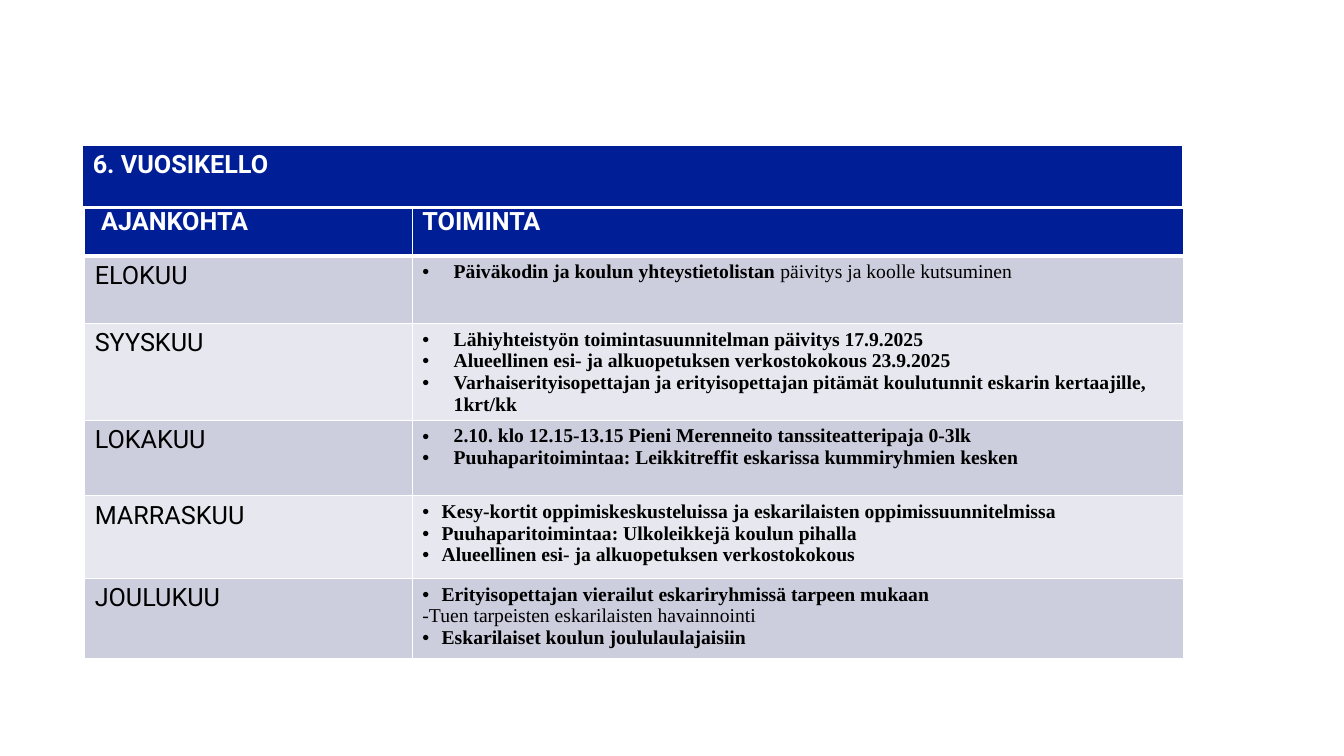
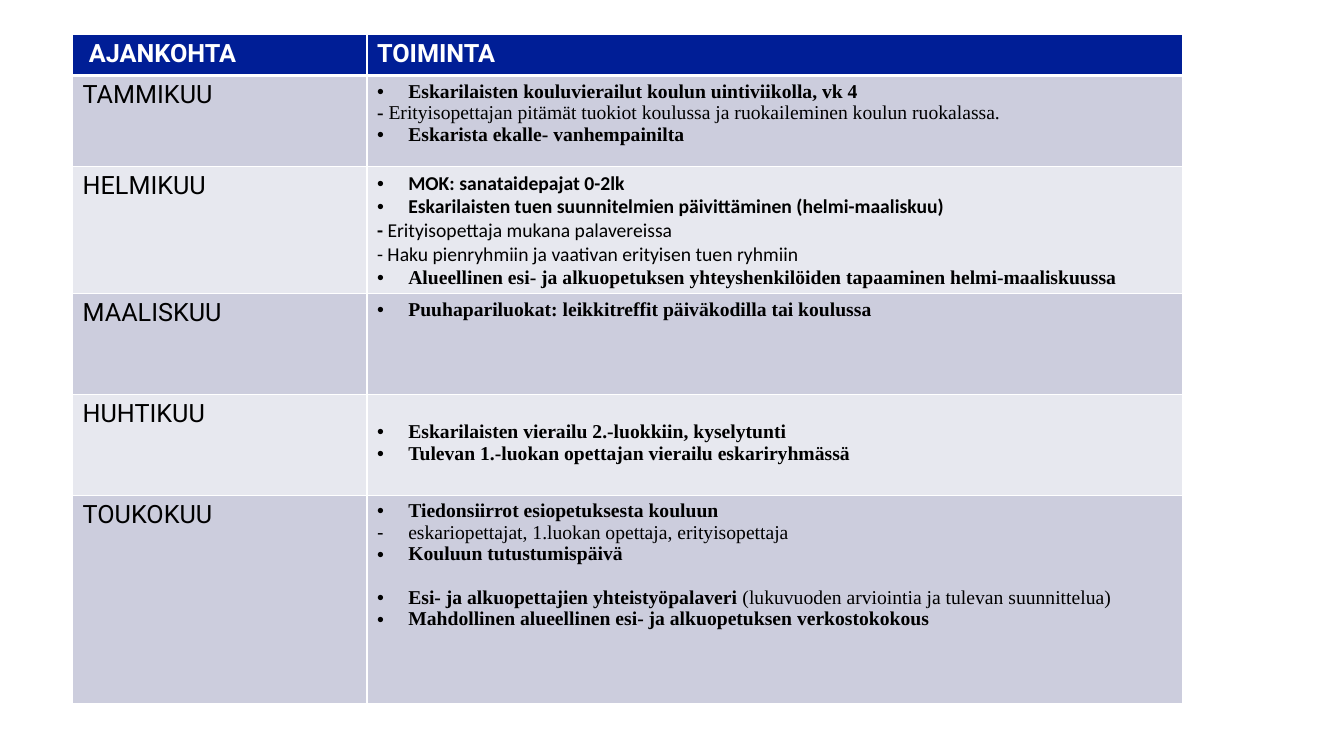
import pptx
import pptx.dml.color
import pptx.oxml
import pptx.oxml.ns
import pptx.util

Inches, Pt = pptx.util.Inches, pptx.util.Pt

BLUE, WHITE, BLACK = "001E96", "FFFFFF", "000000"
BANDS = ("CCCDDD", "E7E8EF")
HEADER = (" AJANKOHTA", "TOIMINTA")
HEADING = {"name": "Roboto", "size": Pt(18), "bold": True}
MONTH = {"name": "Roboto", "size": Pt(18), "bold": False}
SERIF = {"name": "Times New Roman", "size": Pt(14)}
SANS = {"name": "Calibri", "size": Pt(14)}
CELL_TOP = 0.05
LINE = 15.5  # one empty 14 pt line, in points

# Marker: (bullet character, hanging indent in inches)
WIDE, TIGHT, DASH, PLAIN = ("•", 0.31), ("•", 0.19), ("-", 0.31), None

# Month: name, row height, activities as (marker, bold part, regular part, options)
AUTUMN = [
    ("ELOKUU", 0.67, [
        (WIDE, "Päiväkodin ja koulun yhteystietolistan", " päivitys ja koolle kutsuminen"),
    ]),
    ("SYYSKUU", 0.96, [
        (WIDE, "Lähiyhteistyön toimintasuunnitelman päivitys 17.9.2025", ""),
        (WIDE, "Alueellinen esi- ja alkuopetuksen verkostokokous 23.9.2025", ""),
        (WIDE, "Varhaiserityisopettajan ja erityisopettajan pitämät koulutunnit "
               "eskarin kertaajille, 1krt/kk", ""),
    ]),
    ("LOKAKUU", 0.75, [
        (WIDE, "2.10. klo 12.15-13.15 Pieni Merenneito tanssiteatteripaja 0-3lk", ""),
        (WIDE, "Puuhaparitoimintaa: Leikkitreffit eskarissa kummiryhmien kesken", ""),
    ]),
    ("MARRASKUU", 0.82, [
        (TIGHT, "Kesy-kortit oppimiskeskusteluissa ja eskarilaisten oppimissuunnitelmissa", ""),
        (TIGHT, "Puuhaparitoimintaa: Ulkoleikkejä koulun pihalla", ""),
        (TIGHT, "Alueellinen esi- ja alkuopetuksen verkostokokous", ""),
    ]),
    ("JOULUKUU", 0.79, [
        (TIGHT, "Erityisopettajan vierailut eskariryhmissä tarpeen mukaan", ""),
        (PLAIN, "", "-Tuen tarpeisten eskarilaisten havainnointi"),
        (TIGHT, "Eskarilaiset koulun joululaulajaisiin", ""),
    ]),
]
SPRING = [
    ("TAMMIKUU", 0.9, [
        (WIDE, "Eskarilaisten kouluvierailut koulun uintiviikolla, vk 4", ""),
        (PLAIN, "- ", "Erityisopettajan pitämät tuokiot koulussa ja ruokaileminen "
                      "koulun ruokalassa."),
        (WIDE, "Eskarista ekalle- vanhempainilta", ""),
    ]),
    ("HELMIKUU", 1.26, [
        (WIDE, "MOK: sanataidepajat 0-2lk", "", {"font": SANS}),
        (WIDE, "Eskarilaisten tuen suunnitelmien päivittäminen (helmi-maaliskuu)", "",
         {"font": SANS}),
        (PLAIN, "-", " Erityisopettaja mukana palavereissa", {"font": SANS}),
        (PLAIN, "", "- Haku pienryhmiin ja vaativan erityisen tuen ryhmiin", {"font": SANS}),
        (WIDE, "Alueellinen esi- ja alkuopetuksen yhteyshenkilöiden tapaaminen "
               "helmi-maaliskuussa", ""),
    ]),
    ("MAALISKUU", 1, [
        (WIDE, "Puuhapariluokat: leikkitreffit päiväkodilla tai koulussa", ""),
    ]),
    ("HUHTIKUU", 1, [
        (WIDE, "Eskarilaisten vierailu 2.-luokkiin, kyselytunti", "", {"gap": LINE}),
        (WIDE, "Tulevan 1.-luokan opettajan vierailu eskariryhmässä", ""),
    ]),
    ("TOUKOKUU", 2.07, [
        (WIDE, "Tiedonsiirrot esiopetuksesta kouluun", ""),
        (DASH, "", "eskariopettajat, 1.luokan opettaja, erityisopettaja"),
        (WIDE, "Kouluun tutustumispäivä", ""),
        (WIDE, "Esi- ja alkuopettajien yhteistyöpalaveri",
         " (lukuvuoden arviointia ja tulevan suunnittelua)", {"gap": LINE}),
        (WIDE, "Mahdollinen alueellinen esi- ja alkuopetuksen verkostokokous", ""),
    ]),
]

# Each slide: tables as (left, top, column widths, header texts, header height, months)
SLIDES = [
    [(0.84, 2.01, (3.25, 7.65), HEADER, 0.53, AUTUMN),
     (0.82, 1.44, (10.91,), ("6. VUOSIKELLO",), 0.62, [])],
    [(0.72, 0.34, (2.92, 8.09), HEADER, 0.41, SPRING)],
]


def rgb(color):
    return pptx.dml.color.RGBColor.from_string(color)


def add_xml(parent, tag, content="", **attributes):
    listed = "".join(f' {key}="{value}"' for key, value in attributes.items())
    parent.append(pptx.oxml.parse_xml(
        f'<a:{tag} {pptx.oxml.ns.nsdecls("a")}{listed}>{content}</a:{tag}>'))


def style_cell(cell, fill, bottom=1):
    """Draw white borders (bottom width in points) and fill the cell."""
    properties = cell._tc.get_or_add_tcPr()
    line_fill = f'<a:solidFill><a:srgbClr val="{WHITE}"/></a:solidFill>'
    for side, width in zip("LRTB", (1, 1, 1, bottom)):
        add_xml(properties, f"ln{side}", line_fill, w=Pt(width))
    cell.fill.solid()
    cell.fill.fore_color.rgb = rgb(fill)


def add_run(paragraph, text, color, font):
    run = paragraph.add_run()
    run.text = text
    for attribute, value in font.items():
        setattr(run.font, attribute, value)
    run.font.color.rgb = rgb(color)


def add_activity(paragraph, marker, bold, regular, font=SERIF, gap=0):
    if gap:
        paragraph.space_before = Pt(gap)
    if marker:
        character, indent = marker
        properties = paragraph._p.get_or_add_pPr()
        properties.set("marL", str(Inches(indent)))
        properties.set("indent", str(-Inches(indent)))
        add_xml(properties, "buFont", typeface="Arial")
        add_xml(properties, "buChar", char=character)
    for text, weight in ((bold, True), (regular, False)):
        if text:
            add_run(paragraph, text, BLACK, {**font, "bold": weight})


def fill_activities(cell, activities):
    """Write one paragraph per activity; a gap above the first goes to the cell margin."""
    for index, (marker, bold, regular, *rest) in enumerate(activities):
        options = dict(rest[0]) if rest else {}
        if index == 0:
            cell.margin_top = Inches(CELL_TOP) + Pt(options.pop("gap", 0))
            paragraph = cell.text_frame.paragraphs[0]
        else:
            paragraph = cell.text_frame.add_paragraph()
        add_activity(paragraph, marker, bold, regular, **options)


def add_calendar(slide, left, top, widths, header, header_height, months):
    heights = [header_height] + [height for _, height, _ in months]
    table = slide.shapes.add_table(
        len(heights), len(widths), Inches(left), Inches(top),
        Inches(sum(widths)), Inches(sum(heights))).table
    table.horz_banding = False
    for column, width in zip(table.columns, widths):
        column.width = Inches(width)
    for row, height in zip(table.rows, heights):
        row.height = Inches(height)

    for cell, title in zip(table.rows[0].cells, header):
        style_cell(cell, BLUE, bottom=3)
        add_run(cell.text_frame.paragraphs[0], title, WHITE, HEADING)
    for index, (month, _, activities) in enumerate(months):
        month_cell, activity_cell = table.rows[index + 1].cells
        for cell in (month_cell, activity_cell):
            style_cell(cell, BANDS[index % 2])
        add_run(month_cell.text_frame.paragraphs[0], month, BLACK, MONTH)
        fill_activities(activity_cell, activities)


def main():
    deck = pptx.Presentation()
    deck.slide_width, deck.slide_height = Inches(13.33), Inches(7.5)
    for calendars in SLIDES:
        slide = deck.slides.add_slide(deck.slide_layouts[6])
        for calendar in calendars:
            add_calendar(slide, *calendar)
    deck.save("out.pptx")


if __name__ == "__main__":
    main()
